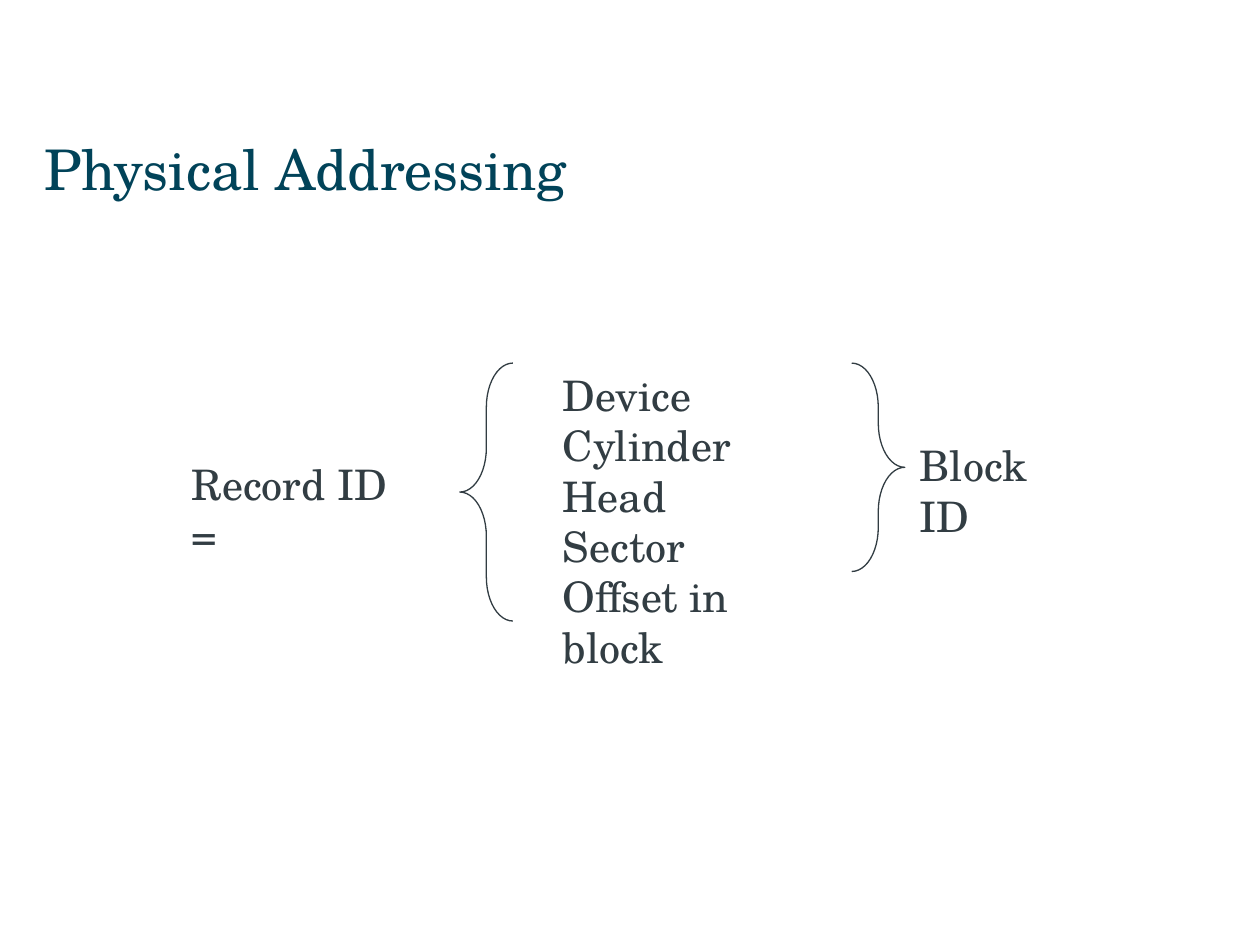
import pptx
import pptx.dml.color
import pptx.enum.shapes
import pptx.enum.text
import pptx.util
from pptx.util import Cm

FONT = "TeX Gyre Schola"
TITLE_COLOR = "014359"
INK = "323D43"


def color(value):
    """Turn a hex string into a colour."""
    return pptx.dml.color.RGBColor.from_string(value)


def add_span(para, text, size, ink):
    """Add one formatted run to a paragraph."""
    span = para.add_run()
    span.text = text
    span.font.name = FONT
    span.font.size = pptx.util.Pt(size)
    span.font.color.rgb = color(ink)


def set_title(page, text):
    """Place and fill the title placeholder."""
    title = page.shapes.title
    title.left, title.top = Cm(0.89), Cm(2.49)
    title.width, title.height = Cm(23.6), Cm(1.8)
    frame = title.text_frame
    frame.margin_left = 0
    frame.auto_size = pptx.enum.text.MSO_AUTO_SIZE.NONE
    frame.vertical_anchor = pptx.enum.text.MSO_ANCHOR.MIDDLE
    para = frame.paragraphs[0]
    para.alignment = pptx.enum.text.PP_ALIGN.LEFT
    add_span(para, text, 32, TITLE_COLOR)


def add_label(page, left, top, width, height, paragraphs):
    """Add a wrapped text box; each paragraph is a list of lines."""
    box = page.shapes.add_textbox(Cm(left), Cm(top), Cm(width), Cm(height))
    frame = box.text_frame
    frame.word_wrap = True
    for index, lines in enumerate(paragraphs):
        para = frame.add_paragraph() if index else frame.paragraphs[0]
        for number, line in enumerate(lines):
            if number:
                para.add_line_break()
            add_span(para, line, 24, INK)


def add_brace(page, left, height, rotation=0):
    """Add an unfilled curly brace, turned if needed."""
    brace = page.shapes.add_shape(
        pptx.enum.shapes.MSO_SHAPE.LEFT_BRACE,
        Cm(left), Cm(7.32), Cm(1.07), Cm(height))
    brace.adjustments[0] = 0.83
    brace.rotation = rotation
    brace.shadow.inherit = False
    brace.fill.background()
    brace.line.color.rgb = color(INK)
    brace.line.width = pptx.util.Pt(0.75)


def main():
    """Build the slide and save it."""
    deck = pptx.Presentation()
    deck.slide_width, deck.slide_height = Cm(25.4), Cm(19.05)
    page = deck.slides.add_slide(deck.slide_layouts[5])
    set_title(page, "Physical Addressing")
    add_label(page, 3.61, 9.12, 5.15, 1.27, [["Record ID ="]])
    add_label(page, 11.1, 7.32, 5.98, 5.38,
              [["Device", "Cylinder"], ["Head"], ["Sector"], ["Offset in block"]])
    add_label(page, 18.29, 8.74, 3.8, 1.27, [["Block ID"]])
    add_brace(page, 9.27, 5.2)
    add_brace(page, 17.17, 4.2, rotation=180)
    deck.save("out.pptx")


if __name__ == "__main__":
    main()
